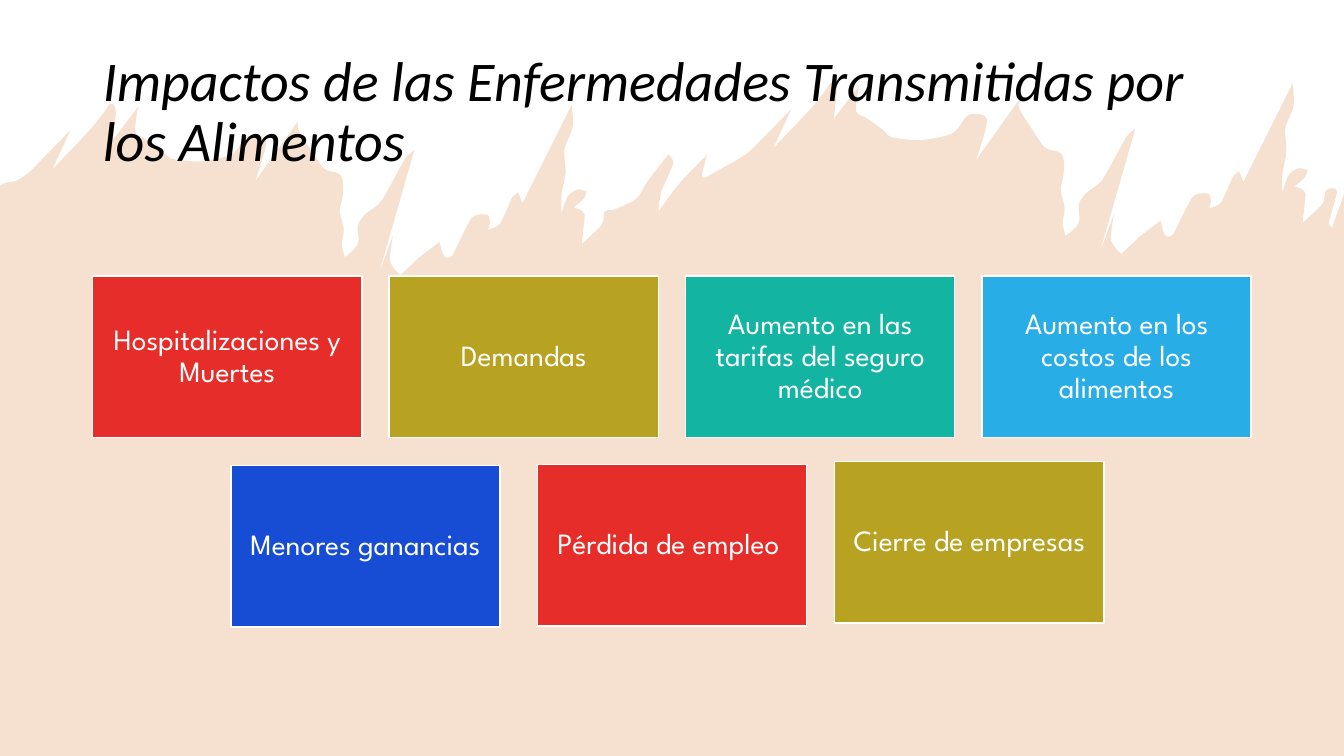
from dataclasses import dataclass
from math import hypot

from lxml.etree import Element, SubElement
from pptx import Presentation
from pptx.dml.color import RGBColor
from pptx.enum.shapes import MSO_SHAPE
from pptx.enum.text import MSO_ANCHOR, MSO_AUTO_SIZE, PP_ALIGN
from pptx.oxml.ns import qn
from pptx.util import Pt

PX = 9144
SLIDE_WIDTH, SLIDE_HEIGHT = 1333, 750
TITLE_ONLY = 5


@dataclass(frozen=True)
class Theme:
    """Colours, fonts and type sizes of the slide."""
    white: str = "FFFFFF"
    black: str = "000000"
    drip: str = "D56A17"
    drip_opacity: int = 20
    red: str = "E72D29"
    olive: str = "B8A221"
    teal: str = "14B4A3"
    sky: str = "29ADE7"
    blue: str = "174CD5"
    title_font: str = "Calibri"
    card_font: str = "League Spartan"
    title_size: int = 40
    card_size: int = 21


THEME = Theme()

DRIP_MOTIF = [
    (745, 149), (785, 108), (767, 147), (805, 107), (820, 88), (824, 82),
    (828, 83), (830, 91), (827, 118), (852, 85), (849, 110), (859, 117),
    (875, 128), (884, 136), (913, 139), (945, 132), (961, 114), (979, 119),
    (968, 159), (1010, 100), (1012, 110), (1036, 146), (1053, 153), (1055, 173),
    (1052, 188), (1056, 206), (1054, 221), (1057, 234), (1070, 221), (1070, 203),
    (1078, 191), (1093, 179), (1117, 136), (1126, 128), (1091, 250), (1105, 212),
    (1102, 238), (1112, 252), (1124, 241), (1130, 235), (1151, 219), (1154, 230),
    (1158, 235), (1164, 232), (1183, 195), (1198, 192), (1201, 199), (1199, 207),
    (1211, 201), (1223, 175), (1229, 170), (1232, 177), (1233, 181), (1282, 83),
    (1283, 105), (1275, 127), (1276, 150), (1272, 172), (1272, 191), (1278, 174),
    (1288, 167), (1297, 169), (1294, 176), (1284, 185), (1290, 187), (1295, 192),
    (1292, 221), (1312, 202), (1315, 189), (1324, 187),
]
MOTIF_SHIFT = (-715, 21)
LEFT_EDGE = [(0, 184), (7, 181), (17, 179)]
MIDDLE_LINK = [
    (627, 200), (634, 194), (643, 179), (663, 153), (668, 162), (656, 190),
    (653, 210), (674, 182), (701, 154), (696, 175), (700, 176), (732, 158),
]
RIGHT_EDGE = [(1326, 192), (1318, 221), (1321, 226), (1333, 193)]

CARD_WIDTH, CARD_HEIGHT = 267, 160
FIRST_LEFT, FIRST_TOP, CARD_PITCH = 92, 274, 294
FIRST_ROW = [
    ("Hospitalizaciones y Muertes", THEME.red),
    ("Demandas", THEME.olive),
    ("Aumento en las tarifas del seguro médico", THEME.teal),
    ("Aumento en los costos de los alimentos", THEME.sky),
]
SECOND_ROW = [
    (229, 462, "Menores ganancias", THEME.blue),
    (533, 461, "Pérdida de empleo ", THEME.red),
    (828, 458, "Cierre de empresas", THEME.olive),
]


def style_run(run, font, size, color, italic=False):
    """Give a run its font, size, colour and slant."""
    run.font.name = font
    run.font.size = Pt(size)
    run.font.italic = italic
    run.font.color.rgb = RGBColor.from_string(color)


def tangent(before, point, after):
    """Return the curve direction at a point, or zero at a sharp tip."""
    ax, ay = point[0] - before[0], point[1] - before[1]
    bx, by = after[0] - point[0], after[1] - point[1]
    if ax * bx + ay * by <= 0:
        return 0, 0
    reach = min(hypot(ax, ay), hypot(bx, by)) / hypot(ax + bx, ay + by)
    return (ax + bx) * reach, (ay + by) * reach


def curve_edge(shape, points):
    """Turn the straight segments between the points into soft curves."""
    padded = [points[0], *points, points[-1]]
    slopes = [tangent(*padded[i:i + 3]) for i in range(len(points))]
    segments = list(shape.element.iter(qn("a:lnTo")))[:len(points) - 1]
    for i, segment in enumerate(segments):
        controls = ((points[i], slopes[i], 1), (points[i + 1], slopes[i + 1], -1))
        for place, (point, slope, sign) in enumerate(controls):
            x, y = (round((point[axis] + sign * slope[axis] / 3) * PX) for axis in (0, 1))
            control = Element(qn("a:pt"), x=str(x - shape.left), y=str(y - shape.top))
            segment.insert(place, control)
        segment.tag = qn("a:cubicBezTo")


def add_drip(slide, width, height):
    """Draw the dripping paint from its edge down to the slide bottom."""
    shift_x, shift_y = MOTIF_SHIFT
    left_motif = [(x + shift_x, y + shift_y) for x, y in DRIP_MOTIF]
    edge = LEFT_EDGE + left_motif + MIDDLE_LINK + DRIP_MOTIF + RIGHT_EDGE
    outline = [(x * PX, y * PX) for x, y in edge + [(width, height), (0, height)]]
    builder = slide.shapes.build_freeform(*outline[0], scale=1.0)
    builder.add_line_segments(outline[1:], close=True)
    shape = builder.convert_to_shape()
    curve_edge(shape, edge)
    shape.shadow.inherit = False
    shape.fill.solid()
    shape.fill.fore_color.rgb = RGBColor.from_string(THEME.drip)
    color = next(shape.element.spPr.iter(qn("a:srgbClr")))
    SubElement(color, qn("a:alpha"), val=str(THEME.drip_opacity * 1000))
    shape.line.fill.background()


def add_title(slide, left, top, width, height):
    """Place the title above the paint."""
    title = slide.shapes.title
    slide.shapes.element.append(title.element)
    title.left, title.top = left * PX, top * PX
    title.width, title.height = width * PX, height * PX
    frame = title.text_frame
    frame.text = "Impactos de las Enfermedades Transmitidas por los Alimentos"
    frame.word_wrap = True
    frame.auto_size = MSO_AUTO_SIZE.NONE
    frame.vertical_anchor = MSO_ANCHOR.MIDDLE
    paragraph = frame.paragraphs[0]
    paragraph.alignment = PP_ALIGN.LEFT
    paragraph.line_spacing = 0.9
    style_run(paragraph.runs[0], THEME.title_font, THEME.title_size, THEME.black, True)


def add_card(slide, left, top, text, color):
    """Draw one impact card."""
    card = slide.shapes.add_shape(
        MSO_SHAPE.RECTANGLE, left * PX, top * PX, CARD_WIDTH * PX, CARD_HEIGHT * PX)
    card.shadow.inherit = False
    card.fill.solid()
    card.fill.fore_color.rgb = RGBColor.from_string(color)
    card.line.color.rgb = RGBColor.from_string(THEME.white)
    card.line.width = Pt(1)
    frame = card.text_frame
    frame.text = text
    frame.word_wrap = True
    frame.vertical_anchor = MSO_ANCHOR.MIDDLE
    frame.margin_left = frame.margin_right = 9 * PX
    frame.margin_top = frame.margin_bottom = 9 * PX
    paragraph = frame.paragraphs[0]
    paragraph.alignment = PP_ALIGN.CENTER
    paragraph.line_spacing = 0.9
    style_run(paragraph.runs[0], THEME.card_font, THEME.card_size, THEME.white)


def add_cards(slide, left, top):
    """Draw both rows of impact cards."""
    for column, (text, color) in enumerate(FIRST_ROW):
        add_card(slide, left + column * CARD_PITCH, top, text, color)
    for card in SECOND_ROW:
        add_card(slide, *card)


def main():
    """Build and save the presentation."""
    presentation = Presentation()
    presentation.slide_width = SLIDE_WIDTH * PX
    presentation.slide_height = SLIDE_HEIGHT * PX
    slide = presentation.slides.add_slide(presentation.slide_layouts[TITLE_ONLY])
    add_drip(slide, SLIDE_WIDTH, SLIDE_HEIGHT)
    add_title(slide, 92, 40, 1150, 145)
    add_cards(slide, FIRST_LEFT, FIRST_TOP)
    presentation.save("out.pptx")


if __name__ == "__main__":
    main()
